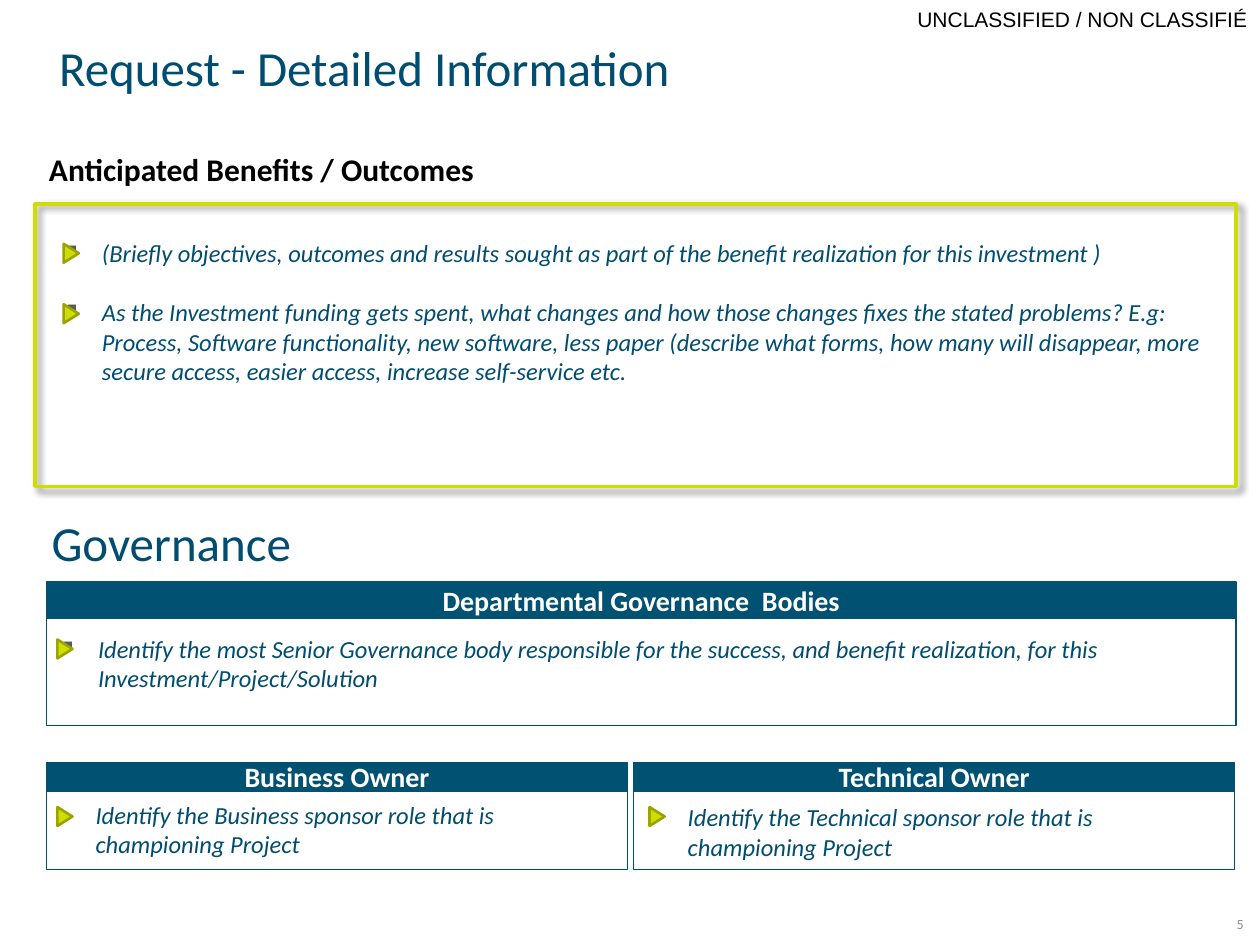
from dataclasses import dataclass
from typing import Optional

from lxml.etree import SubElement
from pptx import Presentation
from pptx.dml.color import RGBColor
from pptx.enum.shapes import MSO_SHAPE
from pptx.enum.text import MSO_ANCHOR, MSO_AUTO_SIZE, PP_ALIGN
from pptx.oxml.ns import qn
from pptx.shapes.autoshape import Shape
from pptx.slide import Slide
from pptx.util import Emu, Inches, Pt

COLUMNS, ROWS = 100, 75
CELL = Inches(0.1)


@dataclass(frozen=True)
class Theme:
    """Colours, fonts and type sizes of the slide."""
    navy: str = "004D71"
    panel: str = "005172"
    lime: str = "CFDE00"
    olive: str = "99A400"
    bullet: str = "595959"
    grey: str = "8C8C8C"
    black: str = "000000"
    white: str = "FFFFFF"
    body_font: str = "Calibri"
    banner_font: str = "Arial"
    title: int = 28
    heading: int = 18
    header: int = 16
    body: int = 14
    banner: int = 12
    footer: int = 8


THEME = Theme()


@dataclass(frozen=True)
class Area:
    """A rectangle in grid columns and rows."""
    column: float
    row: float
    columns: float
    rows: float

    def lengths(self) -> list[Emu]:
        """Return left, top, width and height."""
        return [Emu(round(value * CELL)) for value in (self.column, self.row, self.columns, self.rows)]


@dataclass(frozen=True)
class Style:
    """The look of a run of text."""
    size: int
    color: str
    font: str = THEME.body_font
    bold: Optional[bool] = None
    italic: Optional[bool] = None
    align: PP_ALIGN = PP_ALIGN.LEFT


@dataclass(frozen=True)
class Label:
    """A line of text with its place and style."""
    text: str
    area: Area
    style: Style
    anchor: MSO_ANCHOR = MSO_ANCHOR.TOP
    flush: bool = False


@dataclass(frozen=True)
class Guidance:
    """A bulleted text with the rows of its triangular markers."""
    items: tuple[str, ...]
    area: Area
    marker_column: float
    marker_rows: tuple[float, ...]
    bullet: str


@dataclass(frozen=True)
class Panel:
    """A titled frame."""
    title: str
    column: float
    row: float
    columns: float
    header_rows: float
    body_rows: float


TITLE = Style(THEME.title, THEME.navy)
HEADING = Style(THEME.heading, THEME.black, bold=True)
HEADER = Style(THEME.header, THEME.white, bold=True, align=PP_ALIGN.CENTER)
BODY = Style(THEME.body, THEME.navy, italic=True)
BANNER = Style(THEME.banner, THEME.black, THEME.banner_font, align=PP_ALIGN.RIGHT)
FOOTER = Style(THEME.footer, THEME.grey, align=PP_ALIGN.RIGHT)

LABELS = (
    Label("UNCLASSIFIED / NON CLASSIFIÉ", Area(0, 0, COLUMNS, 3), BANNER),
    Label("Request - Detailed Information", Area(4.7, 1.7, 59.4, 7.2), TITLE, MSO_ANCHOR.MIDDLE, True),
    Label("Anticipated Benefits / Outcomes", Area(2.9, 11.4, 92.5, 4), HEADING),
    Label("Governance", Area(4.1, 39.9, 59.4, 6.2), TITLE, MSO_ANCHOR.MIDDLE, True),
    Label("5", Area(96.4, 71.3, 3.3, 4), FOOTER, MSO_ANCHOR.MIDDLE),
)

PANELS = (
    Panel("Departmental Governance  Bodies", 3.7, 46.2, 94.4, 2.9, 8.5),
    Panel("Business Owner", 3.7, 60.5, 46.1, 2.3, 6.2),
    Panel("Technical Owner", 50.3, 60.5, 47.7, 2.3, 6.2),
)

GUIDANCE = (
    Guidance((
        "(Briefly objectives, outcomes and results sought as part of the benefit realization for this investment )",
        "As the Investment funding gets spent, what changes and how those changes fixes the stated problems? "
        "E.g: Process, Software functionality, new software, less paper (describe what forms, how many will "
        "disappear, more secure access, easier access, increase self-service etc.",
    ), Area(4, 18.4, 92.5, 12.8), 4.9, (19.5, 24.3), "▪"),
    Guidance((
        "Identify the most Senior Governance body responsible for the success, and benefit realization, "
        "for this Investment/Project/Solution",
    ), Area(3.7, 49.8, 92, 5.7), 4.4, (50.9,), "▪"),
    Guidance(("Identify the Business sponsor role that is championing Project",),
             Area(3.5, 63, 45.2, 5.7), 4.4, (64.2,), "•"),
    Guidance(("Identify the Technical sponsor role that is championing Project",),
             Area(50.5, 63.2, 45.2, 5.7), 51.4, (64.2,), "•"),
)


def style_paragraph(paragraph, style: Style) -> None:
    """Apply a style to a paragraph and its runs."""
    paragraph.alignment = style.align
    for run in paragraph.runs:
        font = run.font
        font.name, font.size = style.font, Pt(style.size)
        font.bold, font.italic = style.bold, style.italic
        font.color.rgb = RGBColor.from_string(style.color)


def draw_shape(slide: Slide, kind: MSO_SHAPE, area: Area, line: str, width: float,
               fill: Optional[str] = None) -> Shape:
    """Draw an outlined preset shape with an optional fill."""
    shape = slide.shapes.add_shape(kind, *area.lengths())
    shape.shadow.inherit = False
    if fill:
        shape.fill.solid()
        shape.fill.fore_color.rgb = RGBColor.from_string(fill)
    else:
        shape.fill.background()
    shape.line.color.rgb = RGBColor.from_string(line)
    shape.line.width = Pt(width)
    return shape


def draw_label(slide: Slide, label: Label) -> None:
    """Draw a single line of text."""
    frame = slide.shapes.add_textbox(*label.area.lengths()).text_frame
    frame.word_wrap = not label.flush
    frame.vertical_anchor = label.anchor
    if label.flush:
        frame.margin_left = frame.margin_top = frame.margin_right = frame.margin_bottom = 0
    frame.text = label.text
    style_paragraph(frame.paragraphs[0], label.style)


def draw_shadowed_frame(slide: Slide, area: Area) -> None:
    """Draw the lime frame with its soft shadow."""
    shape = draw_shape(slide, MSO_SHAPE.RECTANGLE, area, THEME.lime, 2)
    effects = shape.element.spPr.find(qn("a:effectLst"))
    shadow = SubElement(effects, qn("a:outerShdw"), blurRad=str(Pt(4)), dist=str(Pt(3)),
                        dir=str(45 * 60000), algn="tl", rotWithShape="0")
    color = SubElement(shadow, qn("a:srgbClr"), val=THEME.black)
    SubElement(color, qn("a:alpha"), val="40000")


def draw_panel(slide: Slide, panel: Panel) -> None:
    """Draw a frame below its filled header."""
    body = Area(panel.column, panel.row + panel.header_rows, panel.columns, panel.body_rows)
    draw_shape(slide, MSO_SHAPE.RECTANGLE, body, THEME.panel, 0.75)
    header = Area(panel.column, panel.row, panel.columns, panel.header_rows)
    shape = draw_shape(slide, MSO_SHAPE.RECTANGLE, header, THEME.panel, 0.75, THEME.panel)
    shape.text_frame.text = panel.title
    shape.text_frame.vertical_anchor = MSO_ANCHOR.MIDDLE
    style_paragraph(shape.text_frame.paragraphs[0], HEADER)


def draw_guidance(slide: Slide, guidance: Guidance) -> None:
    """Draw a bulleted text and its triangular markers."""
    frame = slide.shapes.add_textbox(*guidance.area.lengths()).text_frame
    frame.word_wrap = True
    frame.auto_size = MSO_AUTO_SIZE.SHAPE_TO_FIT_TEXT
    frame.text = "\n".join(guidance.items)
    for index, paragraph in enumerate(frame.paragraphs):
        properties = paragraph._p.get_or_add_pPr()
        properties.set("marL", str(Inches(0.31)))
        properties.set("indent", str(-Inches(0.31)))
        SubElement(SubElement(properties, qn("a:buClr")), qn("a:srgbClr"), val=THEME.bullet)
        SubElement(properties, qn("a:buChar"), char=guidance.bullet)
        if index:
            paragraph.space_before = Pt(17)
        style_paragraph(paragraph, BODY)
    for row in guidance.marker_rows:
        area = Area(guidance.marker_column, row, 1.5, 1.2)
        marker = draw_shape(slide, MSO_SHAPE.FLOWCHART_MERGE, area, THEME.olive, 1.5, THEME.lime)
        marker.rotation = 270


def main() -> None:
    """Build and save the slide."""
    presentation = Presentation()
    presentation.slide_width, presentation.slide_height = COLUMNS * CELL, ROWS * CELL
    slide = presentation.slides.add_slide(presentation.slide_layouts[6])
    draw_shadowed_frame(slide, Area(2.8, 16.2, 95.3, 22.4))
    for panel in PANELS:
        draw_panel(slide, panel)
    for label in LABELS:
        draw_label(slide, label)
    for guidance in GUIDANCE:
        draw_guidance(slide, guidance)
    presentation.save("out.pptx")


if __name__ == "__main__":
    main()
